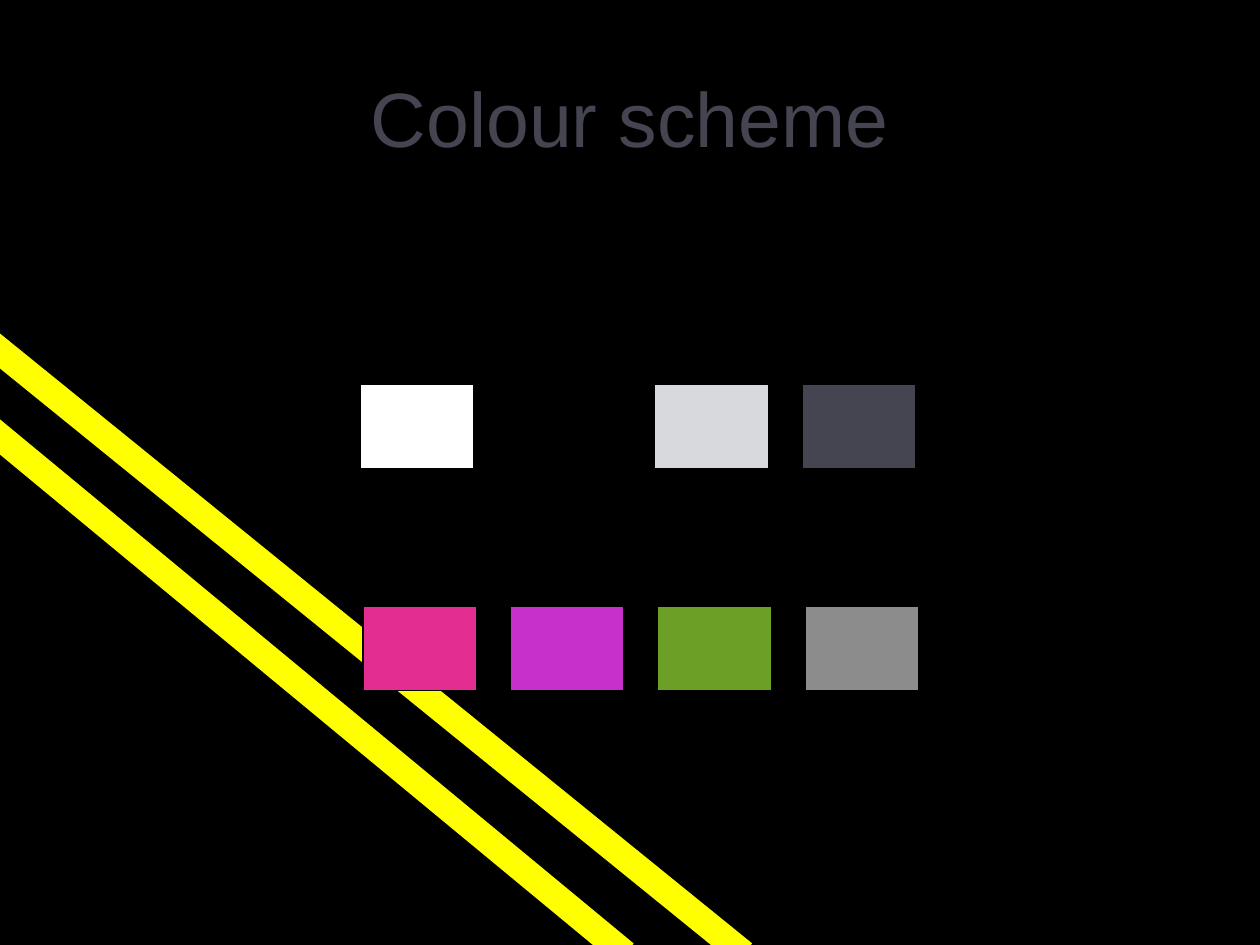
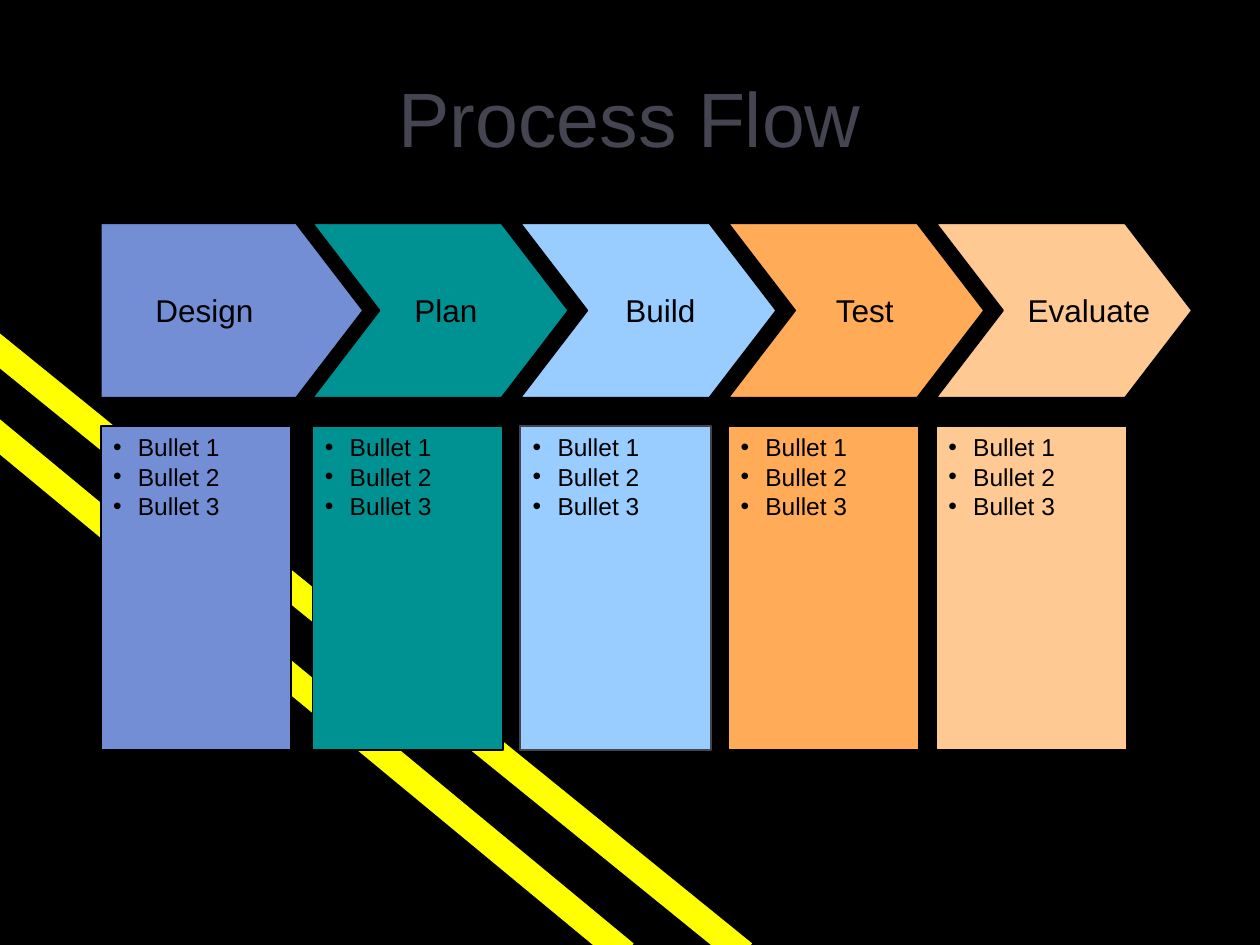
"""Build a colour scheme slide and a process flow slide on a striped black theme."""
from lxml.etree import SubElement
from pptx import Presentation
from pptx.dml.color import RGBColor
from pptx.enum.shapes import MSO_CONNECTOR as Connector, MSO_SHAPE as Shape
from pptx.enum.text import MSO_ANCHOR as Anchor, MSO_AUTO_SIZE as AutoSize, PP_ALIGN as Align
from pptx.oxml.ns import qn
from pptx.util import Cm, Pt

BLACK = RGBColor(0x00, 0x00, 0x00)
WHITE = RGBColor(0xFF, 0xFF, 0xFF)
YELLOW = RGBColor(0xFF, 0xFF, 0x00)
SILVER = RGBColor(0xD8, 0xD9, 0xDC)
SLATE = RGBColor(0x45, 0x45, 0x51)
PINK = RGBColor(0xE3, 0x2D, 0x91)
PURPLE = RGBColor(0xC8, 0x30, 0xCC)
GREEN = RGBColor(0x6B, 0x9F, 0x25)
GREY = RGBColor(0x8C, 0x8C, 0x8C)
INDIGO = RGBColor(0x74, 0x8E, 0xD6)
TEAL = RGBColor(0x00, 0x91, 0x93)
SKY = RGBColor(0x99, 0xCC, 0xFF)
ORANGE = RGBColor(0xFF, 0xAB, 0x57)
PEACH = RGBColor(0xFF, 0xC9, 0x93)

FONT = "Arial"
STRIPES = [(-0.18, 6.93, 14.99, 19.23), (-0.18, 8.66, 12.6, 19.23)]

SWATCH_ROWS = [
    (7.26, 7.75, [WHITE, BLACK, SILVER, SLATE]),
    (7.32, 12.22, [PINK, PURPLE, GREEN, GREY]),
]
SWATCH_STEP, SWATCH_WIDTH, SWATCH_HEIGHT = 2.97, 2.29, 1.7

BULLETS = ["Bullet 1", "Bullet 2", "Bullet 3"]
# name, fill, panel outline, label left, label width
STAGES = [
    ("Design", INDIGO, BLACK, 2.82, 2.6),
    ("Plan", TEAL, BLACK, 8.04, 1.9),
    ("Build", SKY, SLATE, 12.29, 2.05),
    ("Test", ORANGE, BLACK, 16.5, 1.87),
    ("Evaluate", PEACH, BLACK, 20.4, 3.1),
]
FIRST_LEFT, SECOND_LEFT, STAGE_STEP = 2.03, 6.3, 4.19
ARROW_TOP, ARROW_HEIGHT, ARROW_TIP = 4.5, 3.52, 1.35
FIRST_BODY, ARROW_BODY = 3.94, 3.81
PANEL_TOP, PANEL_WIDTH, PANEL_HEIGHT = 8.59, 3.84, 6.53
LABEL_TOP, LABEL_HEIGHT = 5.74, 1.02


def paint(shape, fill, outline, weight):
    shape.shadow.inherit = False
    shape.fill.solid()
    shape.fill.fore_color.rgb = fill
    shape.line.color.rgb = outline
    shape.line.width = Pt(weight)


def write(text_frame, text, size, color, align):
    text_frame.text = text
    for paragraph in text_frame.paragraphs:
        paragraph.alignment = align
        for run in paragraph.runs:
            run.font.name = FONT
            run.font.size = Pt(size)
            run.font.color.rgb = color


def add_box(slide, left, top, width, height, fill, outline, weight):
    box = slide.shapes.add_shape(Shape.RECTANGLE, Cm(left), Cm(top), Cm(width), Cm(height))
    paint(box, fill, outline, weight)
    return box


def add_themed_slide(presentation, title):
    slide = presentation.slides.add_slide(presentation.slide_layouts[6])
    slide.background.fill.solid()
    slide.background.fill.fore_color.rgb = BLACK
    for x1, y1, x2, y2 in STRIPES:
        stripe = slide.shapes.add_connector(Connector.STRAIGHT, Cm(x1), Cm(y1), Cm(x2), Cm(y2))
        stripe.line.color.rgb = YELLOW
        stripe.line.width = Pt(15.5)
        SubElement(stripe._element.spPr, qn("a:effectLst"))
    text_frame = slide.shapes.add_textbox(Cm(1.27), Cm(0.76), Cm(22.86), Cm(3.18)).text_frame
    text_frame.word_wrap = True
    text_frame.vertical_anchor = Anchor.MIDDLE
    write(text_frame, title, 44, SLATE, Align.CENTER)
    return slide


def add_swatches(slide):
    for left, top, colors in SWATCH_ROWS:
        for column, color in enumerate(colors):
            add_box(slide, left + column * SWATCH_STEP, top,
                    SWATCH_WIDTH, SWATCH_HEIGHT, color, BLACK, 0.75)


def add_panel(slide, left, fill, outline):
    panel = add_box(slide, left, PANEL_TOP, PANEL_WIDTH, PANEL_HEIGHT, fill, outline, 1)
    panel.text_frame.vertical_anchor = Anchor.TOP
    write(panel.text_frame, "\n".join(BULLETS), 14, BLACK, Align.LEFT)
    for paragraph in panel.text_frame.paragraphs:
        properties = paragraph._p.get_or_add_pPr()
        properties.set("marL", str(Cm(0.5)))
        properties.set("indent", str(Cm(-0.5)))
        SubElement(properties, qn("a:buFont"), typeface=FONT)
        SubElement(properties, qn("a:buChar"), char="•")


def add_arrow(slide, left, fill, is_first):
    shoulder = left + (FIRST_BODY if is_first else ARROW_BODY)
    middle, bottom = ARROW_TOP + ARROW_HEIGHT / 2, ARROW_TOP + ARROW_HEIGHT
    points = [(shoulder, ARROW_TOP), (shoulder + ARROW_TIP, middle),
              (shoulder, bottom), (left, bottom)]
    if not is_first:
        points.append((left + ARROW_TIP, middle))
    builder = slide.shapes.build_freeform(Cm(left), Cm(ARROW_TOP))
    builder.add_line_segments([(Cm(x), Cm(y)) for x, y in points], close=True)
    paint(builder.convert_to_shape(), fill, BLACK, 1)


def add_label(slide, name, left, width):
    label = slide.shapes.add_textbox(Cm(left), Cm(LABEL_TOP), Cm(width), Cm(LABEL_HEIGHT))
    label.text_frame.word_wrap = False
    label.text_frame.auto_size = AutoSize.SHAPE_TO_FIT_TEXT
    write(label.text_frame, name, 18, BLACK, Align.CENTER)


def add_process(slide):
    for index, (name, fill, outline, label_left, label_width) in enumerate(STAGES):
        left = SECOND_LEFT + (index - 1) * STAGE_STEP if index else FIRST_LEFT
        add_panel(slide, left, fill, outline)
        add_arrow(slide, left, fill, index == 0)
        add_label(slide, name, label_left, label_width)


def main():
    presentation = Presentation()
    presentation.slide_width, presentation.slide_height = Cm(25.4), Cm(19.05)
    add_swatches(add_themed_slide(presentation, "Colour scheme"))
    add_process(add_themed_slide(presentation, "Process Flow"))
    presentation.save("out.pptx")


if __name__ == "__main__":
    main()
